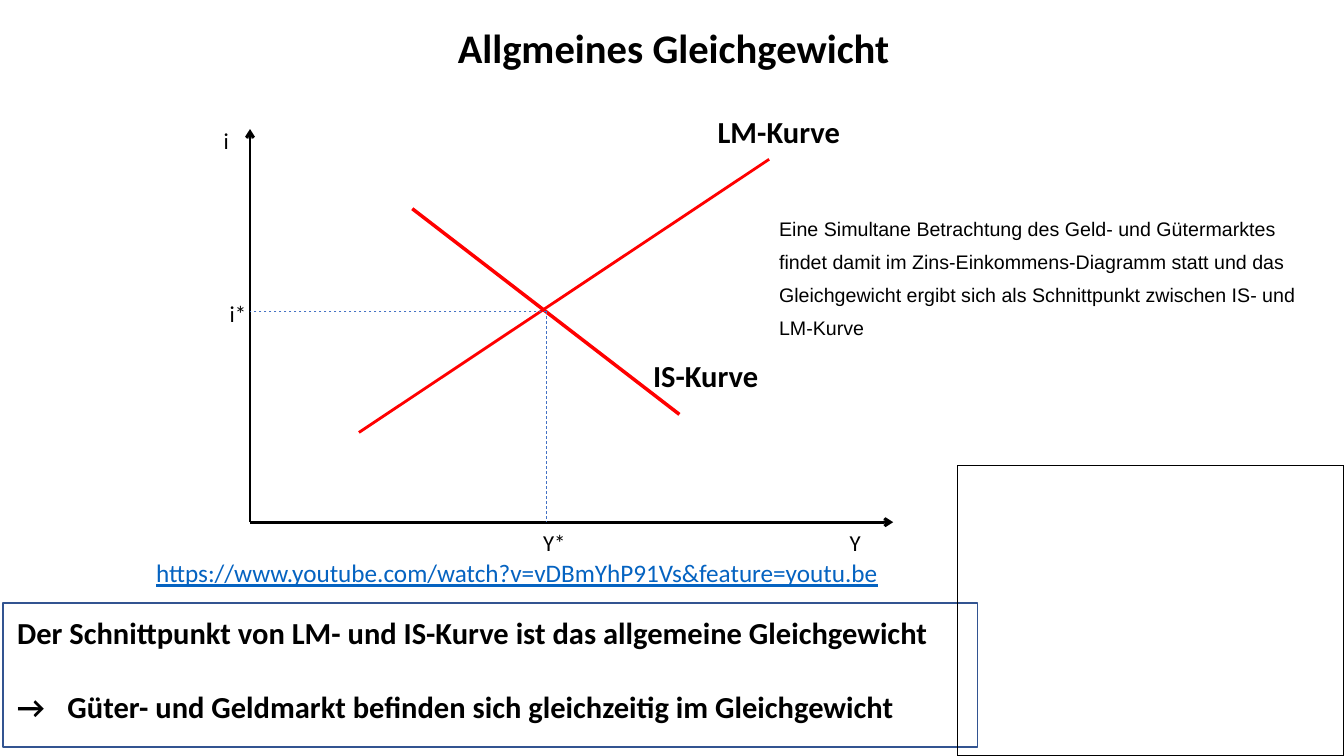
from lxml import etree
from pptx import Presentation
from pptx import util as u
from pptx.dml.color import RGBColor
from pptx.enum import dml, shapes, text
from pptx.oxml.ns import qn

BLACK = RGBColor(0x00, 0x00, 0x00)
RED = RGBColor(0xFF, 0x00, 0x00)
BLUE = RGBColor(0x44, 0x72, 0xC4)
FRAME_BLUE = RGBColor(0x32, 0x54, 0x91)
LINK_BLUE = RGBColor(0x05, 0x63, 0xC1)

AXIS_LABEL = {"name": "Calibri", "size": u.Pt(16.3)}
STRONG = {"name": "Calibri", "size": u.Pt(21.8), "bold": True}
TITLE = {"name": "Calibri", "size": u.Pt(29), "bold": True}
BODY = {"name": "Arial", "size": u.Pt(14)}
LINK = {"name": "Calibri", "size": u.Pt(18), "underline": True}


def write(slide, box, lines, font, color=BLACK, wrap=True, frame=None, **layout):
    """Write lines into a text box, with frame and paragraph settings."""
    label = slide.shapes.add_textbox(*map(u.Pt, box)).text_frame
    label.word_wrap = wrap
    for key, value in (frame or {}).items():
        setattr(label, key, value)
    label.text = "\n".join(lines)
    for index, paragraph in enumerate(label.paragraphs):
        for key, value in layout.items():
            if index or key != "space_before":
                setattr(paragraph, key, value)
        for key, value in font.items():
            setattr(paragraph.font, key, value)
        paragraph.font.color.rgb = color


def draw_line(slide, start, end, color, width, arrow=False, dash=None):
    """Draw a straight line, optionally dashed or with an arrowhead."""
    points = map(u.Pt, (*start, *end))
    stroke = slide.shapes.add_connector(shapes.MSO_CONNECTOR.STRAIGHT, *points)
    stroke.line.color.rgb = color
    stroke.line.width = u.Pt(width)
    if dash:
        stroke.line.dash_style = dash
    if arrow:
        etree.SubElement(stroke.line._get_or_add_ln(), qn("a:tailEnd"), type="arrow")
    etree.SubElement(stroke._element.spPr, qn("a:effectLst"))


def draw_frame(slide, box, color):
    """Draw an unfilled rectangle with a thin outline."""
    frame = slide.shapes.add_shape(shapes.MSO_SHAPE.RECTANGLE, *map(u.Pt, box))
    frame.shadow.inherit = False
    frame.fill.background()
    frame.line.color.rgb = color
    frame.line.width = u.Pt(1)


def add_title(slide, box):
    """Add the centred slide title."""
    write(slide, box, ["Allgmeines Gleichgewicht"], TITLE,
          frame={"vertical_anchor": text.MSO_ANCHOR.MIDDLE},
          alignment=text.PP_ALIGN.CENTER)


def add_is_lm_diagram(slide, box):
    """Draw the axes, both curves and the equilibrium inside the box."""
    left, top, width, height = box

    def at(x, y):
        return left + x, top + y

    origin = at(0, height)
    for axis_end in (at(0, 0), at(width, height)):
        draw_line(slide, origin, axis_end, BLACK, 2, arrow=True)

    curves = [((77.8, 216.7), (370.8, 21.6), 2),
              ((115.9, 56.9), (306.7, 203.8), 2.5)]
    for start, end, weight in curves:
        draw_line(slide, at(*start), at(*end), RED, weight)

    income, interest = 211.7, 130.3
    for foot in (at(0, interest), at(income, height)):
        draw_line(slide, at(income, interest), foot, BLUE, 0.5,
                  dash=dml.MSO_LINE.DASH)

    below_axis = height + 1.4
    labels = [("i", -26, -5, 18, AXIS_LABEL),
              ("i*", -21.6, 118, 26.6, AXIS_LABEL),
              ("Y*", 202.3, below_axis, 31, AXIS_LABEL),
              ("Y", 421.2, below_axis, 22.3, AXIS_LABEL),
              ("IS-Kurve", 280.8, 159, 90, STRONG),
              ("LM-Kurve", 326.9, -15, 102.2, STRONG)]
    for name, x, y, label_width, font in labels:
        label_height = 33.8 if font is STRONG else 27.4
        write(slide, (*at(x, y), label_width, label_height), [name], font, wrap=False)


def add_explanation(slide, box):
    """Add the paragraph beside the diagram."""
    write(slide, box,
          ["Eine Simultane Betrachtung des Geld- und Gütermarktes findet damit im "
           "Zins-Einkommens-Diagramm statt und das Gleichgewicht ergibt sich als "
           "Schnittpunkt zwischen IS- und LM-Kurve"],
          BODY, line_spacing=1.4)


def add_video_address(slide, box):
    """Add the web address below the diagram."""
    write(slide, box, ["https://www.youtube.com/watch?v=vDBmYhP91Vs&feature=youtu.be"],
          LINK, LINK_BLUE)


def add_conclusion(slide, box):
    """Add the framed conclusion."""
    left, top, width, height = box
    write(slide, (left + 2.9, top + 4.3, width - 13.7, height - 16.6),
          ["Der Schnittpunkt von LM- und IS-Kurve ist das allgemeine Gleichgewicht",
           "→\tGüter- und Geldmarkt befinden sich gleichzeitig im Gleichgewicht"],
          STRONG, wrap=False, space_before=u.Pt(26.6))
    draw_frame(slide, box, FRAME_BLUE)


def main():
    """Build and save the slide."""
    deck = Presentation()
    deck.slide_width, deck.slide_height = u.Pt(960), u.Pt(540)
    slide = deck.slides.add_slide(deck.slide_layouts[6])
    add_title(slide, (182.2, 4.3, 598.3, 58.3))
    add_is_lm_diagram(slide, (178.6, 92.2, 459.4, 280.8))
    add_conclusion(slide, (2.2, 430.6, 696.2, 103))
    add_explanation(slide, (549.4, 144.7, 399.6, 125.3))
    add_video_address(slide, (104.4, 394.6, 548.6, 51.1))
    draw_frame(slide, (684, 332.6, 276, 207.4), BLACK)
    deck.save("out.pptx")


if __name__ == "__main__":
    main()
